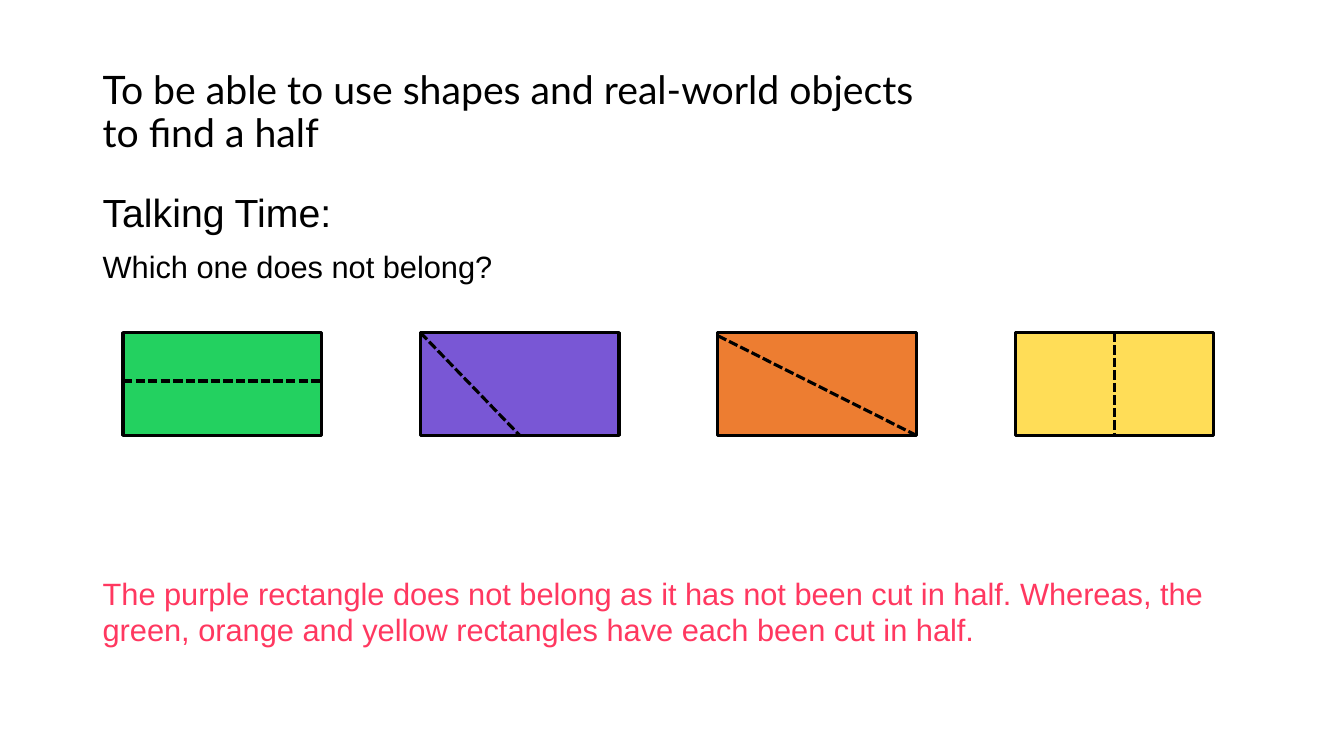
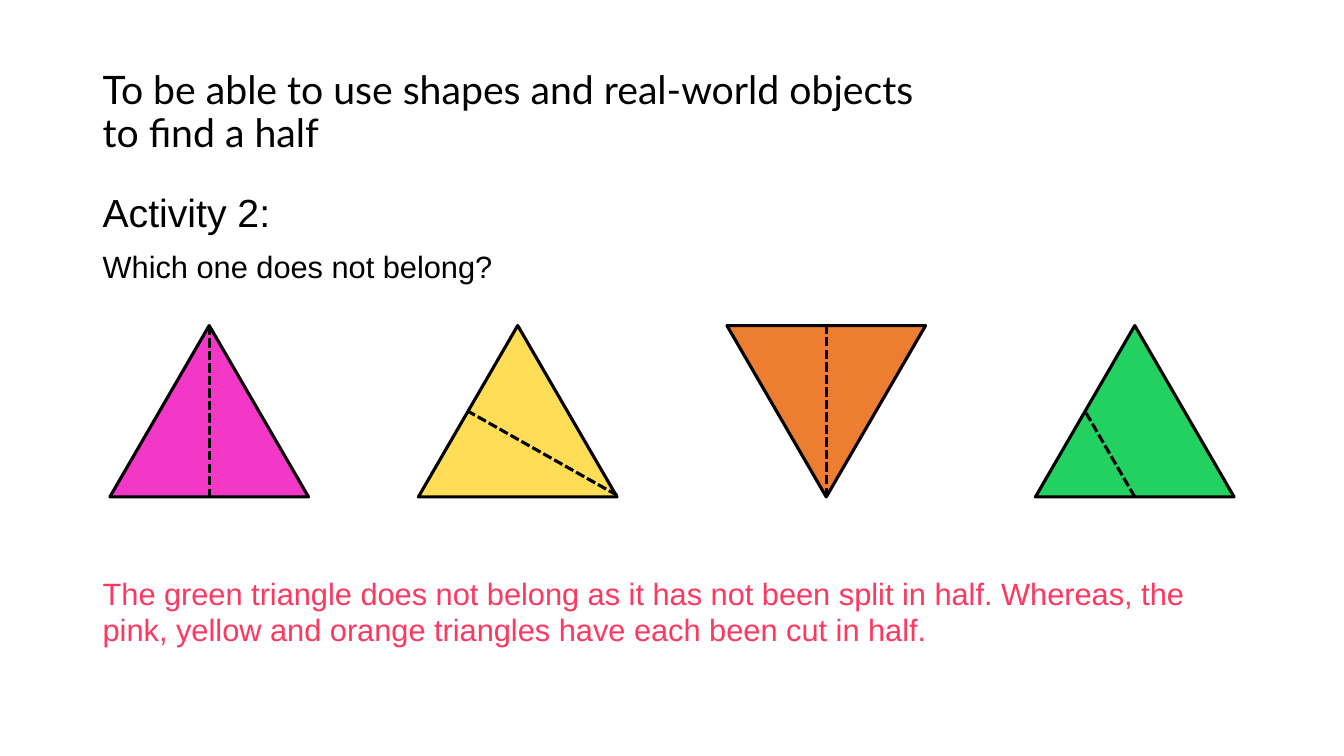
"""Build two slides that ask which shape has not been cut in half."""
import dataclasses
import typing

import lxml.etree
import pptx
import pptx.dml.color
import pptx.enum.dml
import pptx.enum.shapes
import pptx.enum.text
import pptx.oxml.ns
import pptx.presentation
import pptx.shapes.autoshape
import pptx.slide
import pptx.text.text
import pptx.util

Inches = pptx.util.Inches
Pt = pptx.util.Pt
ShapeType = pptx.enum.shapes.MSO_SHAPE
Point = tuple[float, float]

COLOURS = {
    "text": "000000",
    "answer": "FF3860",
    "outline": "000000",
    "green": "23D160",
    "purple": "7957D5",
    "orange": "ED7D31",
    "yellow": "FFDD57",
    "pink": "F337C7",
}
FORMATS = {
    "title": {"name": "Lato", "size": Pt(28)},
    "heading": {"name": "Arial", "size": Pt(28)},
    "body": {"name": "Arial", "size": Pt(22)},
}
TITLE_LINES = ("To be able to use shapes and real-world objects", "to find a half")
QUESTION = "Which one does not belong?"
MARGIN = 0.92
BODY_WIDTH = 11.5
TITLE_SPACING = 0.9
BODY_SPACING = 0.96
OUTLINE_WIDTH = Pt(2.25)


@dataclasses.dataclass(frozen=True)
class Figure:
    """A coloured shape with a cut given in fractions of its box."""

    colour: str
    start: Point
    end: Point
    rotation: float = 0


@dataclasses.dataclass(frozen=True)
class FigureRow:
    """A row of equal shapes at an even pitch."""

    shape_type: ShapeType
    left: float
    top: float
    width: float
    height: float
    pitch: float
    figures: tuple[Figure, ...]


@dataclasses.dataclass(frozen=True)
class Puzzle:
    """The content of one slide."""

    heading: str
    row: FigureRow
    answer: str


PUZZLES = (
    Puzzle(
        "Talking Time:",
        FigureRow(
            ShapeType.RECTANGLE, 1.22, 3.3, 1.97, 1.02, 2.95,
            (
                Figure("green", (0, 0.47), (1, 0.47)),
                Figure("purple", (0, 0), (0.5, 1)),
                Figure("orange", (0, 0.03), (1, 1)),
                Figure("yellow", (0.5, 0), (0.5, 1)),
            ),
        ),
        "The purple rectangle does not belong as it has not been cut in half. "
        "Whereas, the green, orange and yellow rectangles have each been cut in half.",
    ),
    Puzzle(
        "Activity 2:",
        FigureRow(
            ShapeType.ISOSCELES_TRIANGLE, 1.09, 3.23, 1.97, 1.7, 3.06,
            (
                Figure("pink", (0.5, 0), (0.5, 1)),
                Figure("yellow", (1, 0.99), (0.25, 0.5)),
                Figure("orange", (0.5, 1), (0.5, 0), 180),
                Figure("green", (0.5, 1), (0.25, 0.5)),
            ),
        ),
        "The green triangle does not belong as it has not been split in half. "
        "Whereas, the pink, yellow and orange triangles have each been cut in half.",
    ),
)


def colour(name: str) -> pptx.dml.color.RGBColor:
    """Return a named colour."""
    return pptx.dml.color.RGBColor.from_string(COLOURS[name])


def apply_format(target: typing.Any, values: dict[str, typing.Any]) -> None:
    """Set each attribute of the target from the values."""
    for attribute, value in values.items():
        setattr(target, attribute, value)


def add_text_box(
    slide: pptx.slide.Slide, top: float, width: float, height: float
) -> pptx.text.text.TextFrame:
    """Add a wrapping text box at the left margin."""
    shape = slide.shapes.add_textbox(
        Inches(MARGIN), Inches(top), Inches(width), Inches(height)
    )
    shape.text_frame.word_wrap = True
    return shape.text_frame


def write_lines(
    paragraph: pptx.text.text._Paragraph,
    lines: tuple[str, ...],
    style: str,
    colour_name: str = "text",
    spacing: float = BODY_SPACING,
) -> None:
    """Write lines into one paragraph in a named style."""
    paragraph.line_spacing = spacing
    for index, line in enumerate(lines):
        if index:
            paragraph.add_line_break()
        run = paragraph.add_run()
        run.text = line
        apply_format(run.font, FORMATS[style])
        run.font.color.rgb = colour(colour_name)


def add_title(slide: pptx.slide.Slide) -> None:
    """Add the shared lesson title."""
    frame = add_text_box(slide, 0.4, 9.6, 1.45)
    frame.vertical_anchor = pptx.enum.text.MSO_ANCHOR.MIDDLE
    write_lines(frame.paragraphs[0], TITLE_LINES, "title", spacing=TITLE_SPACING)


def add_prompt(slide: pptx.slide.Slide, heading: str) -> None:
    """Add the heading and the question below it."""
    frame = add_text_box(slide, 1.85, BODY_WIDTH, 1.1)
    write_lines(frame.paragraphs[0], (heading,), "heading")
    question = frame.add_paragraph()
    question.space_before = Pt(10)
    write_lines(question, (QUESTION,), "body")


def add_answer(slide: pptx.slide.Slide, answer: str) -> None:
    """Add the answer at the foot of the slide."""
    frame = add_text_box(slide, 5.68, BODY_WIDTH, 0.8)
    write_lines(frame.paragraphs[0], (answer,), "body", "answer")


def style_outline(shape: typing.Any) -> None:
    """Give a shape or connector the shared outline."""
    shape.line.color.rgb = colour("outline")
    shape.line.width = OUTLINE_WIDTH


def add_cut(slide: pptx.slide.Slide, start: Point, end: Point) -> None:
    """Add a dashed line between two points in inches."""
    connector = slide.shapes.add_connector(
        pptx.enum.shapes.MSO_CONNECTOR.STRAIGHT,
        *(Inches(length) for length in (*start, *end)),
    )
    style_outline(connector)
    connector.line.dash_style = pptx.enum.dml.MSO_LINE.SQUARE_DOT
    lxml.etree.SubElement(
        connector._element.spPr, pptx.oxml.ns.qn("a:effectLst")
    )


def add_row(slide: pptx.slide.Slide, row: FigureRow) -> None:
    """Draw the shapes of a row with their cuts."""
    for index, figure in enumerate(row.figures):
        left = row.left + index * row.pitch
        shape = slide.shapes.add_shape(
            row.shape_type,
            Inches(left), Inches(row.top), Inches(row.width), Inches(row.height),
        )
        shape.shadow.inherit = False
        shape.rotation = figure.rotation
        shape.fill.solid()
        shape.fill.fore_color.rgb = colour(figure.colour)
        style_outline(shape)
        start, end = (
            (left + across * row.width, row.top + down * row.height)
            for across, down in (figure.start, figure.end)
        )
        add_cut(slide, start, end)


def add_puzzle(
    presentation: pptx.presentation.Presentation, puzzle: Puzzle
) -> None:
    """Add one puzzle slide."""
    slide = presentation.slides.add_slide(presentation.slide_layouts[6])
    add_title(slide)
    add_prompt(slide, puzzle.heading)
    add_answer(slide, puzzle.answer)
    add_row(slide, puzzle.row)


def main() -> None:
    """Build and save the presentation."""
    presentation = pptx.Presentation()
    presentation.slide_width = Inches(13.33)
    presentation.slide_height = Inches(7.5)
    for puzzle in PUZZLES:
        add_puzzle(presentation, puzzle)
    presentation.save("out.pptx")


if __name__ == "__main__":
    main()
